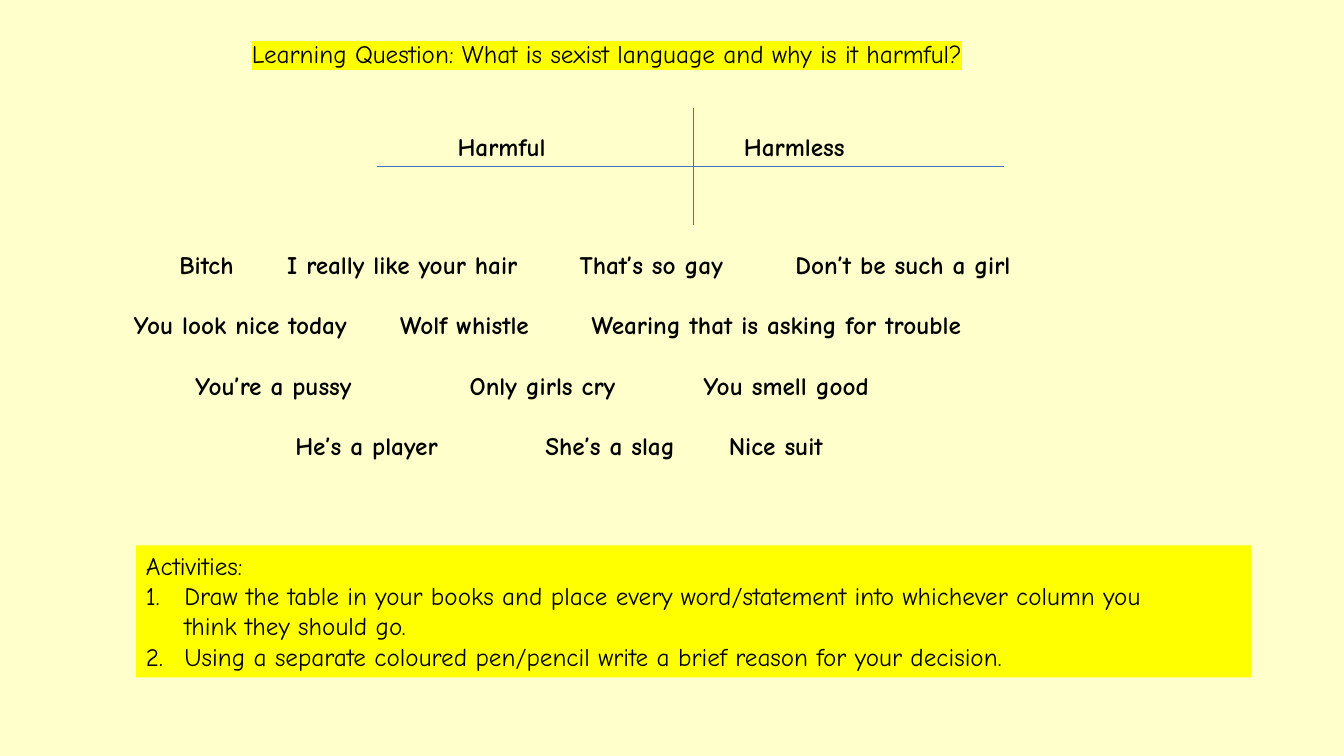
"""Build a lesson slide on sorting phrases into harmful and harmless language."""
from dataclasses import dataclass
from typing import Any

import pptx
import pptx.dml.color
import pptx.enum.dml
import pptx.enum.shapes
import pptx.enum.text
import pptx.util
from lxml import etree
from pptx.oxml.ns import qn

EMU_PER_PX = 9144


@dataclass(frozen=True)
class Theme:
    font: str = "Comic Neue"
    text_size: int = 18
    line_width: float = 0.5
    paper: str = "FFFFCC"
    ink: str = "000000"
    marker: str = "FFFF00"
    rule: str = "4472C4"


@dataclass(frozen=True)
class Box:
    left: int
    top: int
    width: int
    height: int


@dataclass(frozen=True)
class Phrase:
    indent: int
    text: str


@dataclass(frozen=True)
class Rule:
    x1: int
    y1: int
    x2: int
    y2: int


THEME = Theme()
ROW_GAP = 30
STEP_INDENT = 38
TITLE = "Learning Question: What is sexist language and why is it harmful?"
TITLE_BOX = Box(240, 33, 796, 40)
HEADINGS_BOX = Box(391, 125, 544, 40)
PHRASES_BOX = Box(52, 242, 1202, 222)
ACTIVITIES_BOX = Box(135, 541, 1106, 131)
HEADINGS = [[Phrase(53, "Harmful"), Phrase(337, "Harmless")]]
PHRASES = [
    [Phrase(116, "Bitch"), Phrase(223, "I really like your hair"),
     Phrase(513, "That’s so gay"), Phrase(727, "Don’t be such a girl")],
    [Phrase(71, "You look nice today"), Phrase(335, "Wolf whistle"),
     Phrase(525, "Wearing that is asking for trouble")],
    [Phrase(132, "You’re a pussy"), Phrase(404, "Only girls cry"), Phrase(636, "You smell good")],
    [Phrase(231, "He’s a player"), Phrase(479, "She’s a slag"), Phrase(661, "Nice suit")],
]
STEPS = [
    ["Draw the table in your books and place every word/statement into whichever column you",
     "think they should go."],
    ["Using a separate coloured pen/pencil write a brief reason for your decision."],
]
TABLE_RULES = [Rule(688, 107, 688, 223), Rule(374, 165, 996, 165)]


def px(length: int) -> pptx.util.Emu:
    """Turn px into EMU."""
    return pptx.util.Emu(length * EMU_PER_PX)


def rgb(colour: str) -> pptx.dml.color.RGBColor:
    """Turn a hex string into a colour."""
    return pptx.dml.color.RGBColor.from_string(colour)


def place(box: Box) -> tuple[pptx.util.Emu, ...]:
    """Give the four lengths of a box in EMU."""
    return px(box.left), px(box.top), px(box.width), px(box.height)


def add_run(paragraph: Any, text: str, bold: bool = False) -> Any:
    """Add one run in the theme's type."""
    run = paragraph.add_run()
    run.text = text
    run.font.name = THEME.font
    run.font.size = pptx.util.Pt(THEME.text_size)
    run.font.bold = bold
    run.font.color.rgb = rgb(THEME.ink)
    return run


def add_text_frame(slide: Any, box: Box) -> Any:
    """Add a wrapping text box and return its frame."""
    frame = slide.shapes.add_textbox(*place(box)).text_frame
    frame.word_wrap = True
    return frame


def add_title(slide: Any) -> None:
    """Add the highlighted learning question."""
    question = add_run(add_text_frame(slide, TITLE_BOX).paragraphs[0], TITLE)
    highlight = etree.Element(qn("a:highlight"))
    etree.SubElement(highlight, qn("a:srgbClr"), val=THEME.marker)
    question.font.fill
    question.font._element.find(qn("a:solidFill")).addnext(highlight)


def add_phrase_rows(slide: Any, box: Box, rows: list[list[Phrase]]) -> None:
    """Add rows of bold phrases, each phrase at its own tab stop."""
    frame = add_text_frame(slide, box)
    for index, row in enumerate(rows):
        paragraph = frame.add_paragraph() if index else frame.paragraphs[0]
        if index:
            paragraph.space_before = px(ROW_GAP)
        stops = etree.SubElement(paragraph._p.get_or_add_pPr(), qn("a:tabLst"))
        for phrase in row:
            etree.SubElement(stops, qn("a:tab"), pos=str(px(phrase.indent)), algn="l")
            add_run(paragraph, "\t" + phrase.text, bold=True)


def add_activities(slide: Any) -> None:
    """Add the yellow panel with the numbered steps."""
    panel = slide.shapes.add_shape(
        pptx.enum.shapes.MSO_SHAPE.RECTANGLE, *place(ACTIVITIES_BOX))
    panel.shadow.inherit = False
    panel.fill.solid()
    panel.fill.fore_color.rgb = rgb(THEME.marker)
    panel.line.fill.background()
    frame = panel.text_frame
    frame.word_wrap = True
    frame.vertical_anchor = pptx.enum.text.MSO_ANCHOR.TOP
    add_run(frame.paragraphs[0], "Activities:")
    for step in STEPS:
        paragraph = frame.add_paragraph()
        properties = paragraph._p.get_or_add_pPr()
        properties.set("marL", str(px(STEP_INDENT)))
        properties.set("indent", str(-px(STEP_INDENT)))
        etree.SubElement(properties, qn("a:buFont"), typeface=THEME.font)
        etree.SubElement(properties, qn("a:buAutoNum"), type="arabicPeriod")
        for index, line in enumerate(step):
            if index:
                paragraph.add_line_break()
            add_run(paragraph, line)
    for paragraph in frame.paragraphs:
        paragraph.alignment = pptx.enum.text.PP_ALIGN.LEFT


def add_table_rules(slide: Any) -> None:
    """Add the crossing rules of the two-column table."""
    table = slide.shapes.add_group_shape()
    for rule in TABLE_RULES:
        connector = table.shapes.add_connector(
            pptx.enum.shapes.MSO_CONNECTOR.STRAIGHT,
            px(rule.x1), px(rule.y1), px(rule.x2), px(rule.y2))
        connector.line.color.rgb = rgb(THEME.rule)
        connector.line.width = pptx.util.Pt(THEME.line_width)
        etree.SubElement(connector._element.spPr, qn("a:effectLst"))


def main() -> None:
    """Build and save the slide."""
    deck = pptx.Presentation()
    deck.slide_width, deck.slide_height = px(1333), px(750)
    slide = deck.slides.add_slide(deck.slide_layouts[6])
    slide.background.fill.solid()
    slide.background.fill.fore_color.rgb = rgb(THEME.paper)
    add_title(slide)
    add_phrase_rows(slide, HEADINGS_BOX, HEADINGS)
    add_phrase_rows(slide, PHRASES_BOX, PHRASES)
    add_activities(slide)
    add_table_rules(slide)
    deck.save("out.pptx")


if __name__ == "__main__":
    main()
